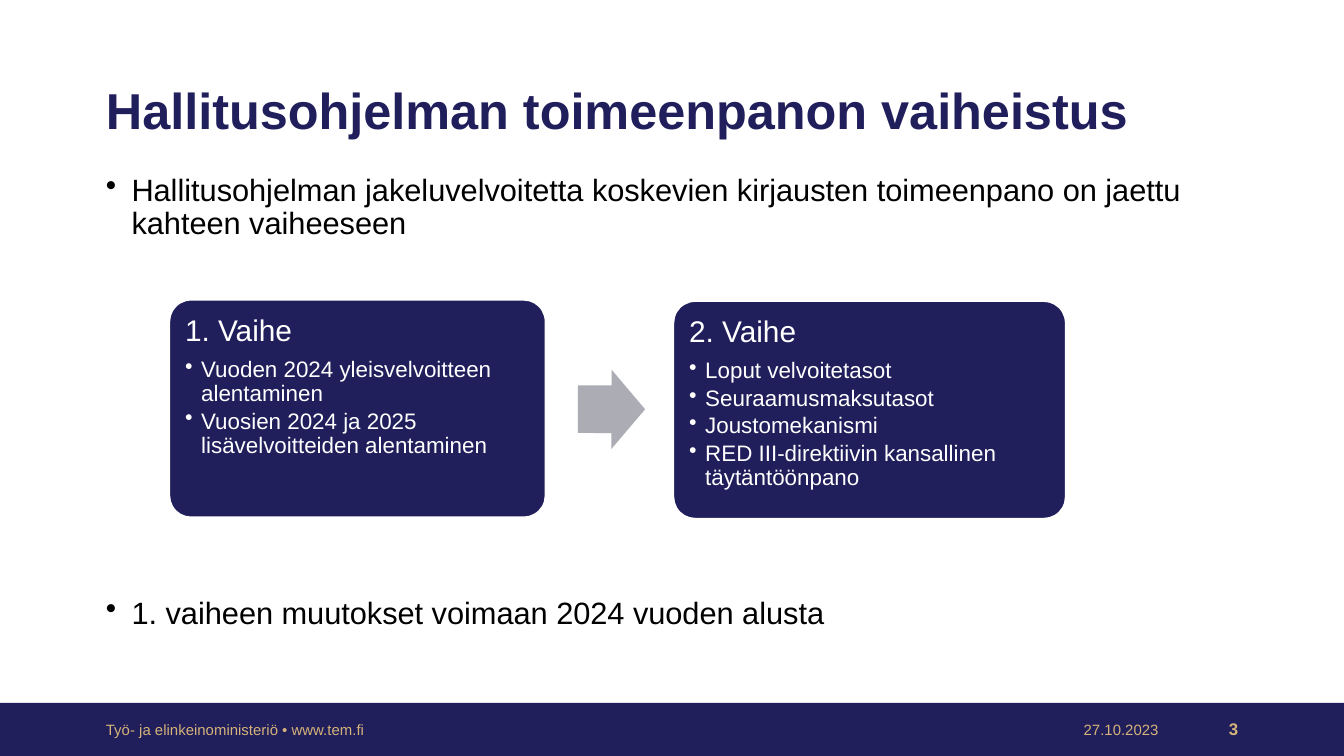
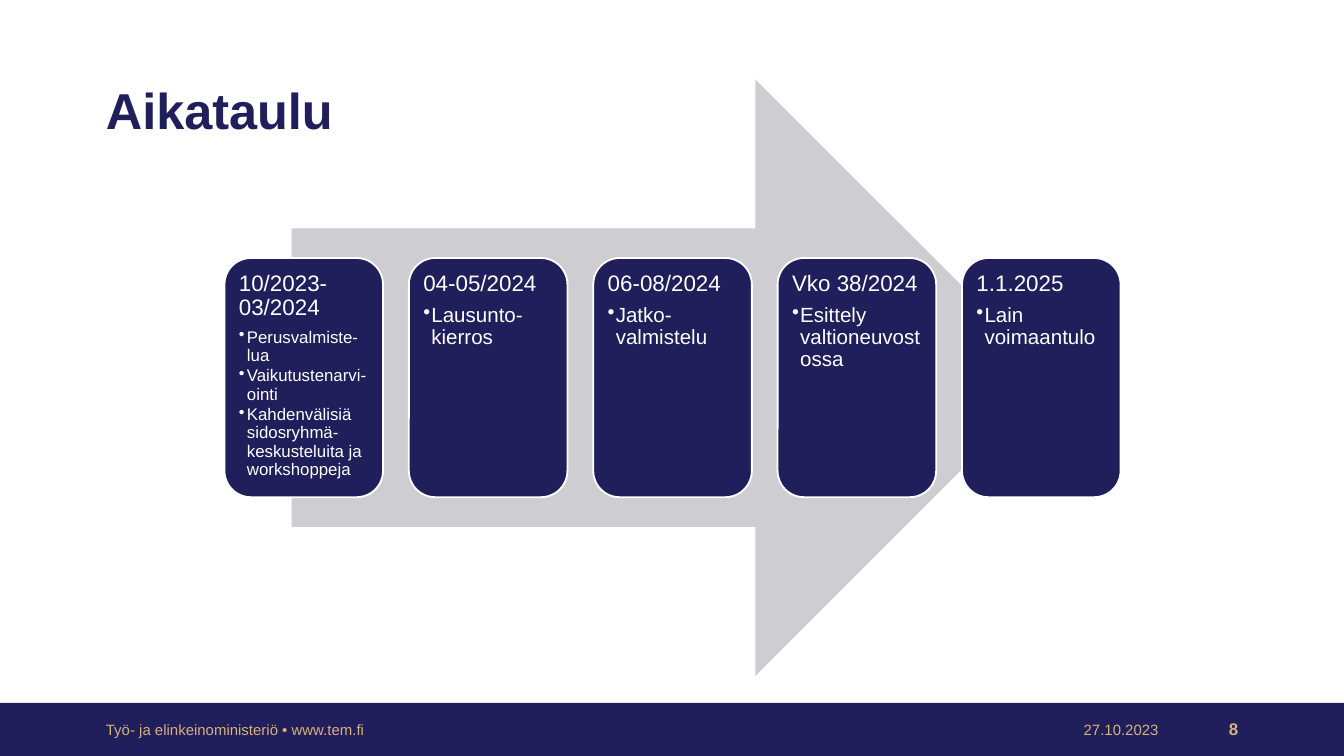
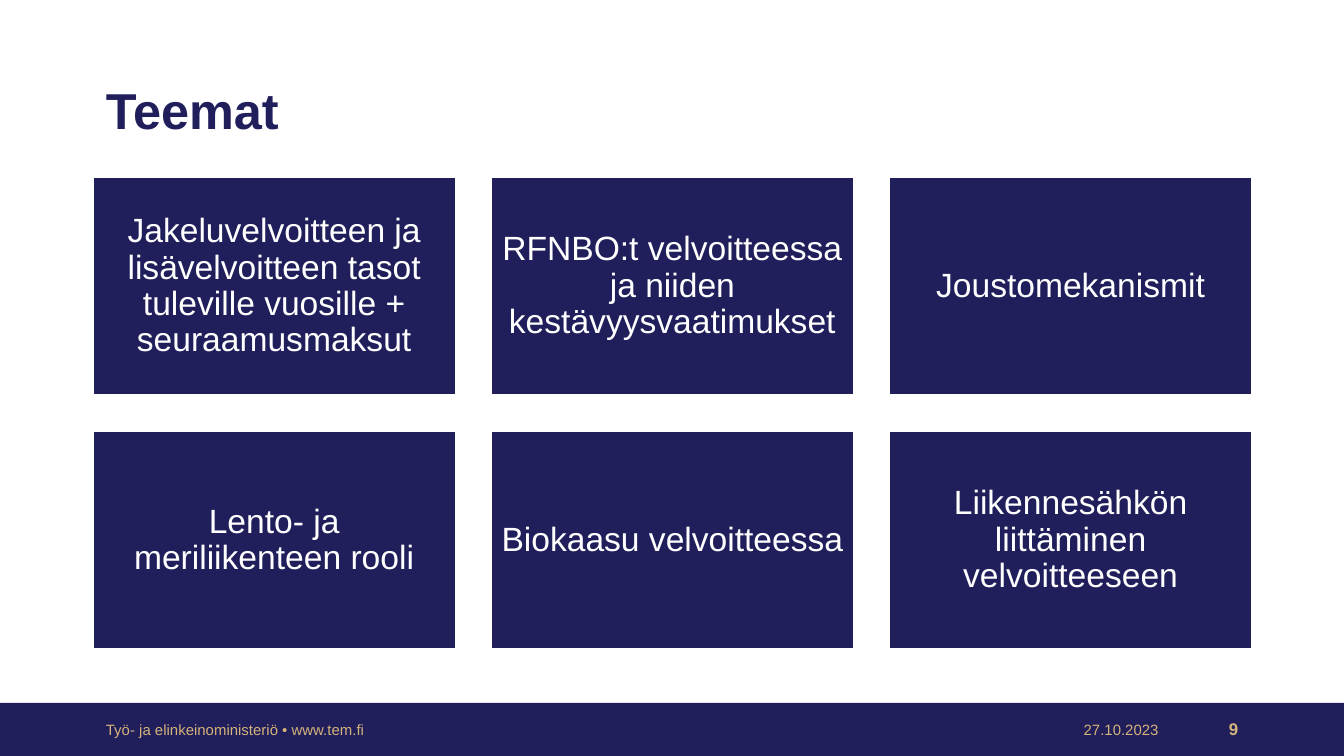
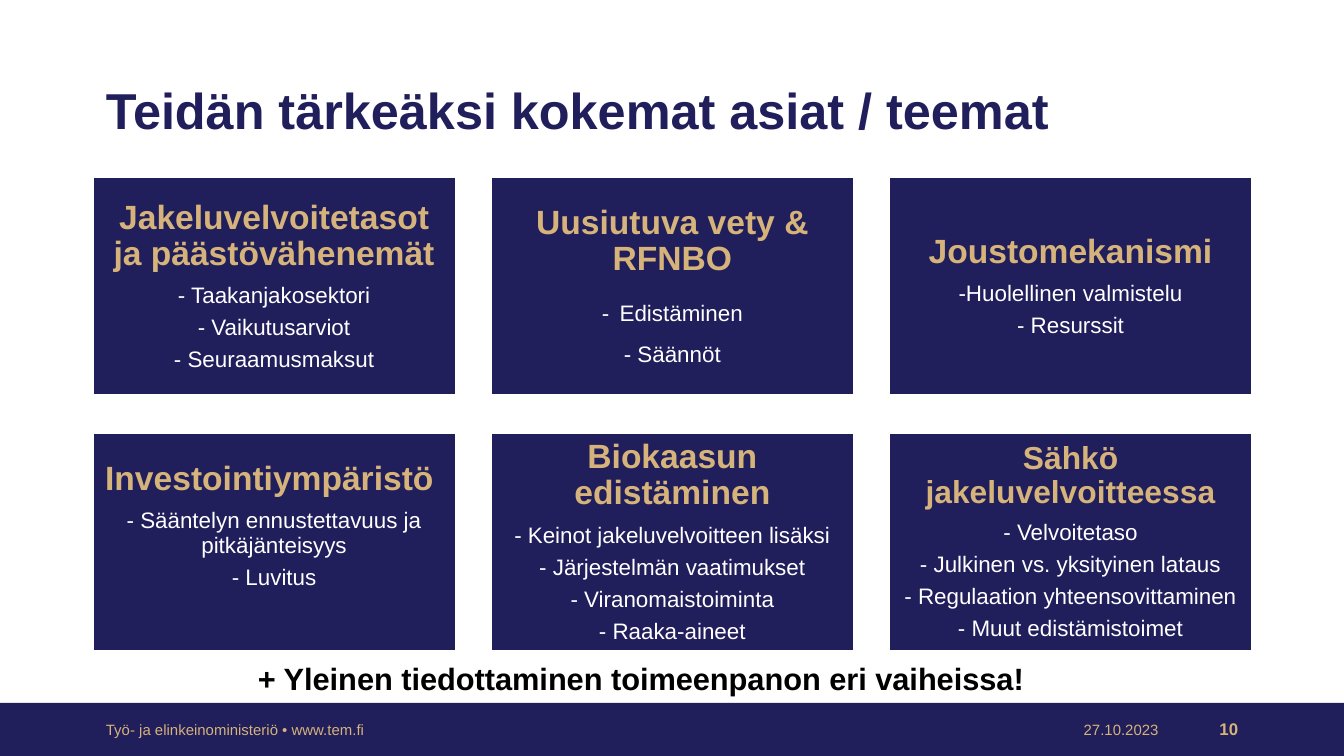
import pptx
import pptx.util
import pptx.dml.color
import pptx.enum.shapes
import pptx.enum.text
import pptx.oxml.ns
from lxml import etree

RGBColor = pptx.dml.color.RGBColor
SHAPE = pptx.enum.shapes.MSO_SHAPE
ALIGN = pptx.enum.text.PP_ALIGN
ANCHOR = pptx.enum.text.MSO_ANCHOR
Inches, Pt = pptx.util.Inches, pptx.util.Pt

NAVY = RGBColor(0x20, 0x1E, 0x5B)
GOLD = RGBColor(0xD5, 0xB3, 0x7A)
GREY = RGBColor(0xAC, 0xAC, 0xB5)
PALE = RGBColor(0xCD, 0xCD, 0xD2)
WHITE = RGBColor(0xFF, 0xFF, 0xFF)
BLACK = RGBColor(0x00, 0x00, 0x00)
FONT = "Arial"

prs = pptx.Presentation()
prs.slide_width = Inches(10)
prs.slide_height = Inches(10) * 9 // 16
# Grid of 100 columns and 100 rows
COL, ROW = prs.slide_width / 100, prs.slide_height / 100
MARGIN, CONTENT = 6.9, 86.2


def box(s, at, kind=None, fill=None, line=None, inset=None, anchor=ANCHOR.TOP):
    """Add a shape, or a text box when no kind is given; at is in columns and rows."""
    x, y, w, h = at
    place = [round(v) for v in (x * COL, y * ROW, w * COL, h * ROW)]
    if kind is None:
        sp = s.shapes.add_textbox(*place)
    else:
        sp = s.shapes.add_shape(kind, *place)
        sp.shadow.inherit = False
        sp.fill.solid()
        sp.fill.fore_color.rgb = fill
        if line is None:
            sp.line.fill.background()
        else:
            sp.line.color.rgb = line
            sp.line.width = Pt(1)
    tf = sp.text_frame
    tf.word_wrap = True
    tf.vertical_anchor = anchor
    if inset is not None:
        tf.margin_left = tf.margin_right = tf.margin_top = tf.margin_bottom = Inches(inset)
    return sp


def write(sp, runs, color, bold=False, align=ALIGN.LEFT, spacing=0.9, after=0, bullet=None):
    """Add a paragraph of (text, size) runs; after is a share of the largest size."""
    tf = sp.text_frame
    p = tf.paragraphs[0] if not tf.paragraphs[0].runs else tf.add_paragraph()
    if bullet:
        pPr = p._p.get_or_add_pPr()
        pPr.set("marL", str(Inches(bullet)))
        pPr.set("indent", str(-Inches(bullet)))
        etree.SubElement(pPr, pptx.oxml.ns.qn("a:buChar")).set("char", "•")
    p.alignment = align
    p.line_spacing = spacing
    p.space_after = Pt(round(after * max(size for _, size in runs), 1))
    for text, size in runs:
        r = p.add_run()
        r.text = text
        r.font.name = FONT
        r.font.size = Pt(size)
        r.font.bold = bold
        r.font.color.rgb = color
    return p


# Title, band and footer of every slide
slides = []
for number, title in [
    (3, "Hallitusohjelman toimeenpanon vaiheistus"),
    (8, "Aikataulu"),
    (9, "Teemat"),
    (10, "Teidän tärkeäksi kokemat asiat / teemat"),
]:
    s = prs.slides.add_slide(prs.slide_layouts[6])
    slides.append(s)
    box(s, (0, 93, 100, 7), SHAPE.RECTANGLE, NAVY)
    sp = box(s, (MARGIN, 7.64, 78.8, 14.58), anchor=ANCHOR.MIDDLE)
    write(sp, [(title, 27)], NAVY, bold=True)
    for x, w, text, size, align in [
        (MARGIN, 33.7, "Työ- ja elinkeinoministeriö • www.tem.fi", 8, ALIGN.LEFT),
        (79.5, 7.7, "27.10.2023", 8, ALIGN.RIGHT),
        (87.2, 5.9, str(number), 9, ALIGN.RIGHT),
    ]:
        sp = box(s, (x, 94.93, w, 3.02), anchor=ANCHOR.MIDDLE)
        write(sp, [(text, size)], GOLD, bold=size == 9, align=align, spacing=1)
phases, timeline, themes, wishes = slides

# Phases: bullets above and below two boxes
sp = box(phases, (MARGIN, 22.22, CONTENT, 64.89))
write(sp, [("Hallitusohjelman jakeluvelvoitetta koskevien kirjausten toimeenpano on jaettu "
            "kahteen vaiheeseen", 16.5)], BLACK, bullet=0.19)
p = write(sp, [("1. vaiheen muutokset voimaan 2024 vuoden alusta", 16.5)], BLACK, bullet=0.19)
p.space_before = Pt(191)

for x, y, w, heading, items in [
    (12.6, 39.64, 28, "1. Vaihe", [
        "Vuoden 2024 yleisvelvoitteen alentaminen",
        "Vuosien 2024 ja 2025 lisävelvoitteiden alentaminen"]),
    (50.1, 39.82, 29.2, "2. Vaihe", [
        "Loput velvoitetasot", "Seuraamusmaksutasot", "Joustomekanismi",
        "RED III-direktiivin kansallinen täytäntöönpano"]),
]:
    sp = box(phases, (x, y, w, 28.8), SHAPE.ROUNDED_RECTANGLE, NAVY, WHITE, inset=0.07)
    sp.adjustments[0] = 0.1
    write(sp, [(heading, 16)], WHITE, after=0.35)
    for item in items:
        write(sp, [(item, 12)], WHITE, after=0.15, bullet=0.12)
sp = box(phases, (43, 48.89, 5, 10.49), SHAPE.RIGHT_ARROW, GREY)
sp.adjustments[0], sp.adjustments[1] = 0.6, 0.5
sp.rotation = 0.1

# Timeline: five steps on a wide arrow
box(timeline, (21.7, 10.49, 56.7, 78.93), SHAPE.RIGHT_ARROW, PALE)
for i, (date, size, items) in enumerate([
    ("10/2023-03/2024", 9, ["Perusvalmiste-lua", "Vaikutustenarvi-ointi",
                            "Kahdenvälisiä sidosryhmä-keskusteluita ja workshoppeja"]),
    ("04-05/2024", 11, ["Lausunto-kierros"]),
    ("06-08/2024", 11, ["Jatko-valmistelu"]),
    ("Vko 38/2024", 11, ["Esittely valtioneuvostossa"]),
    ("1.1.2025", 11, ["Lain voimaantulo"]),
]):
    sp = box(timeline, (16.7 + i * 13.72, 34.13, 11.8, 31.64),
             SHAPE.ROUNDED_RECTANGLE, NAVY, WHITE, inset=0.05)
    write(sp, [(date, 12)], WHITE, after=0.35)
    for item in items:
        write(sp, [(item, size)], WHITE, after=0.15, bullet=0.06)

# Card grid shared by the last two slides
CARD_W, CARD_H, CARD_TOP = 27, 28.8, 23.47
CARD_STEP = (CONTENT - CARD_W) / 2 + 0.03

# Themes: three by two cards
for i, theme in enumerate([
    "Jakeluvelvoitteen ja lisävelvoitteen tasot tuleville vuosille + seuraamusmaksut",
    "RFNBO:t velvoitteessa ja niiden kestävyysvaatimukset",
    "Joustomekanismit",
    "Lento- ja meriliikenteen rooli",
    "Biokaasu velvoitteessa",
    "Liikennesähkön liittäminen velvoitteeseen",
]):
    row, col = divmod(i, 3)
    sp = box(themes, (MARGIN + col * CARD_STEP, CARD_TOP + row * 33.6, CARD_W, CARD_H),
             SHAPE.RECTANGLE, NAVY, WHITE, inset=0.07, anchor=ANCHOR.MIDDLE)
    write(sp, [(theme, 18)], WHITE, align=ALIGN.CENTER, after=0.35)

# Wishes: the same cards with a heading and points
for i, (heading, size, points) in enumerate([
    ("Jakeluvelvoitetasot ja päästövähenemät", 18, [
        [("- Taakanjakosektori", 12)], [("- Vaikutusarviot", 12)], [("- Seuraamusmaksut", 12)]]),
    ("Uusiutuva vety & RFNBO", 18, [
        [("-", 12), (" ", 20), ("Edistäminen", 12)], [("- Säännöt", 12)]]),
    ("Joustomekanismi", 18, [
        [("-Huolellinen valmistelu", 12)], [("- Resurssit", 12)]]),
    ("Investointiympäristö ", 18, [
        [("- Sääntelyn ennustettavuus ja pitkäjänteisyys", 12)], [("- Luvitus", 12)]]),
    ("Biokaasun edistäminen", 18, [
        [("- Keinot jakeluvelvoitteen lisäksi", 12)], [("- Järjestelmän vaatimukset", 12)],
        [("- Viranomaistoiminta", 12)], [("- Raaka-aineet", 12)]]),
    ("Sähkö jakeluvelvoitteessa", 17, [
        [("- Velvoitetaso", 12)], [("- Julkinen vs. yksityinen lataus", 12)],
        [("- Regulaation yhteensovittaminen", 12)], [("- Muut edistämistoimet", 12)]]),
]):
    row, col = divmod(i, 3)
    sp = box(wishes, (MARGIN + col * CARD_STEP, CARD_TOP + row * 33.8, CARD_W, CARD_H),
             SHAPE.RECTANGLE, NAVY, WHITE, inset=0.07, anchor=ANCHOR.MIDDLE)
    if heading.startswith("Investointi"):
        sp.text_frame.margin_bottom = Inches(0.31)
    write(sp, [(heading, size)], GOLD, bold=True, align=ALIGN.CENTER, after=0.35)
    for runs in points:
        write(sp, runs, WHITE, align=ALIGN.CENTER, after=0.35)

# Closing remark under the cards
sp = box(wishes, (18.2, 86.4, 63.6, 6.76))
write(sp, [("+ Yleinen tiedottaminen toimeenpanon eri vaiheissa!", 16.5)], BLACK,
      bold=True, spacing=1)

prs.save("out.pptx")
